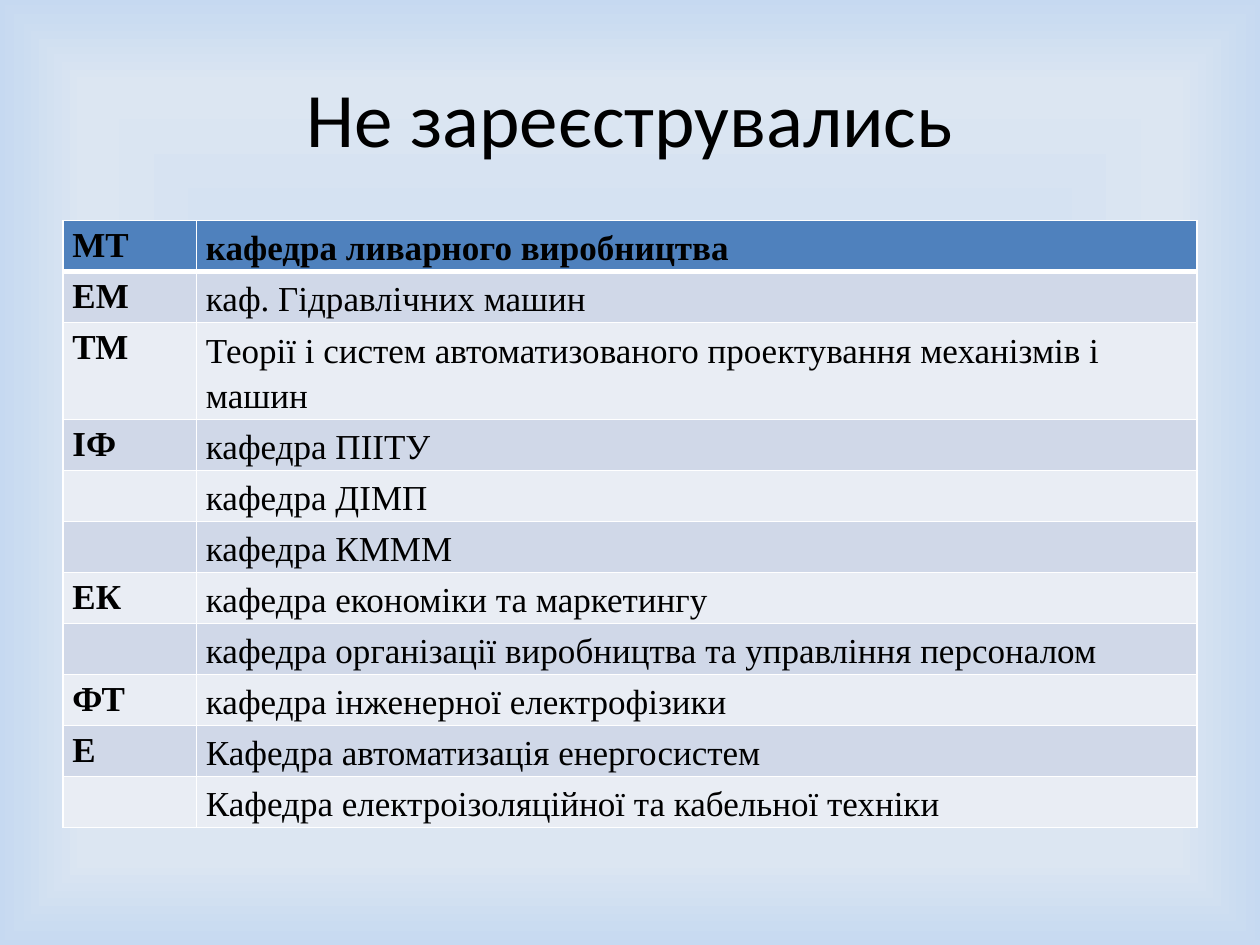
import pptx
import pptx.util
import pptx.oxml
import pptx.oxml.ns
import pptx.dml.color
import pptx.enum.text
import lxml.etree

Inches = pptx.util.Inches
qn = pptx.oxml.ns.qn
ANCHOR = pptx.enum.text.MSO_ANCHOR
ALIGN = pptx.enum.text.PP_ALIGN

COLORS = {
    "text": "000000",
    "header": "4F81BD",
    "band": "D0D8E8",
    "light": "E9EDF4",
    "border": "FFFFFF",
}
BACKGROUND_STOPS = [
    (0, "C6D9F1"), (31, "CEDEF1"), (82, "DCE6F2"), (95, "CCDDF1"),
    (97, "CADCF1"), (99, "C8DAF1"), (100, "C6D9F1"),
]
DEPARTMENTS = [
    ("МТ", "кафедра ливарного виробництва"),
    ("ЕМ", "каф. Гідравлічних машин"),
    ("ТМ", "Теорії і систем автоматизованого проектування механізмів і машин"),
    ("ІФ", "кафедра ПІІТУ"),
    ("", "кафедра ДІМП"),
    ("", "кафедра КМММ"),
    ("ЕК", "кафедра економіки та маркетингу"),
    ("", "кафедра організації виробництва та управління персоналом"),
    ("ФТ", "кафедра інженерної електрофізики"),
    ("Е", "Кафедра автоматизація енергосистем"),
    ("", "Кафедра електроізоляційної та кабельної техніки"),
]


def write_text(frame, text, font, size, bold=False, align=ALIGN.LEFT, spacing=1.0):
    para = frame.paragraphs[0]
    para.alignment = align
    para.line_spacing = spacing
    span = para.add_run()
    span.text = text
    span.font.name = font
    span.font.size = pptx.util.Pt(size)
    span.font.bold = bold
    span.font.color.rgb = pptx.dml.color.RGBColor.from_string(COLORS["text"])


def add_border(properties, side, width):
    line = lxml.etree.Element(qn(f"a:{side}"), w=str(pptx.util.Pt(width)))
    solid = lxml.etree.SubElement(line, qn("a:solidFill"))
    lxml.etree.SubElement(solid, qn("a:srgbClr"), val=COLORS["border"])
    return line


deck = pptx.Presentation()
deck.slide_width = Inches(10)
deck.slide_height = Inches(7.5)
page = deck.slides.add_slide(deck.slide_layouts[6])

page.background.fill.gradient()
gradient = page.element.find(".//" + qn("a:gradFill"))
for child in list(gradient):
    gradient.remove(child)
stops = lxml.etree.SubElement(gradient, qn("a:gsLst"))
for position, color in BACKGROUND_STOPS:
    stop = lxml.etree.SubElement(stops, qn("a:gs"), pos=str(position * 1000))
    lxml.etree.SubElement(stop, qn("a:srgbClr"), val=color)
shade = lxml.etree.SubElement(gradient, qn("a:path"))
shade.set("path", "rect")
center = lxml.etree.SubElement(shade, qn("a:fillToRect"))
for side in "ltrb":
    center.set(side, "50000")

title = page.shapes.add_textbox(Inches(0.5), Inches(0.3), Inches(9), Inches(1.25))
title.text_frame.word_wrap = True
title.text_frame.vertical_anchor = ANCHOR.MIDDLE
write_text(title.text_frame, "Не зареєструвались", font="Calibri", size=44, align=ALIGN.CENTER)

table_height = Inches(4.82)
row_height = Inches(4.46) // len(DEPARTMENTS)
side_margin = Inches(0.3) // 4
frame = page.shapes.add_table(
    len(DEPARTMENTS), 2, Inches(0.5), Inches(1.75), Inches(9), table_height
)
table = frame.table
table.horz_banding = False
table.columns[0].width = Inches(1.06)
table.columns[1].width = Inches(7.94)

for row, entry in enumerate(DEPARTMENTS):
    table.rows[row].height = row_height
    fill = "header" if row == 0 else "band" if row % 2 else "light"
    for column, text in enumerate(entry):
        cell = table.cell(row, column)
        cell.margin_left = cell.margin_right = side_margin
        cell.margin_top = cell.margin_bottom = 0
        cell.vertical_anchor = ANCHOR.MIDDLE if column else ANCHOR.TOP
        cell.fill.solid()
        cell.fill.fore_color.rgb = pptx.dml.color.RGBColor.from_string(COLORS[fill])
        if text:
            write_text(cell.text_frame, text, font="Times New Roman", size=20,
                       bold=row == 0 or column == 0, spacing=1.15)
        properties = cell._tc.get_or_add_tcPr()
        for index, side in enumerate(["lnL", "lnR", "lnT", "lnB"]):
            heavy = (row == 0 and side == "lnB") or (row == 1 and side == "lnT")
            properties.insert(index, add_border(properties, side, 3 if heavy else 1))
frame.height = table_height

deck.save("out.pptx")
